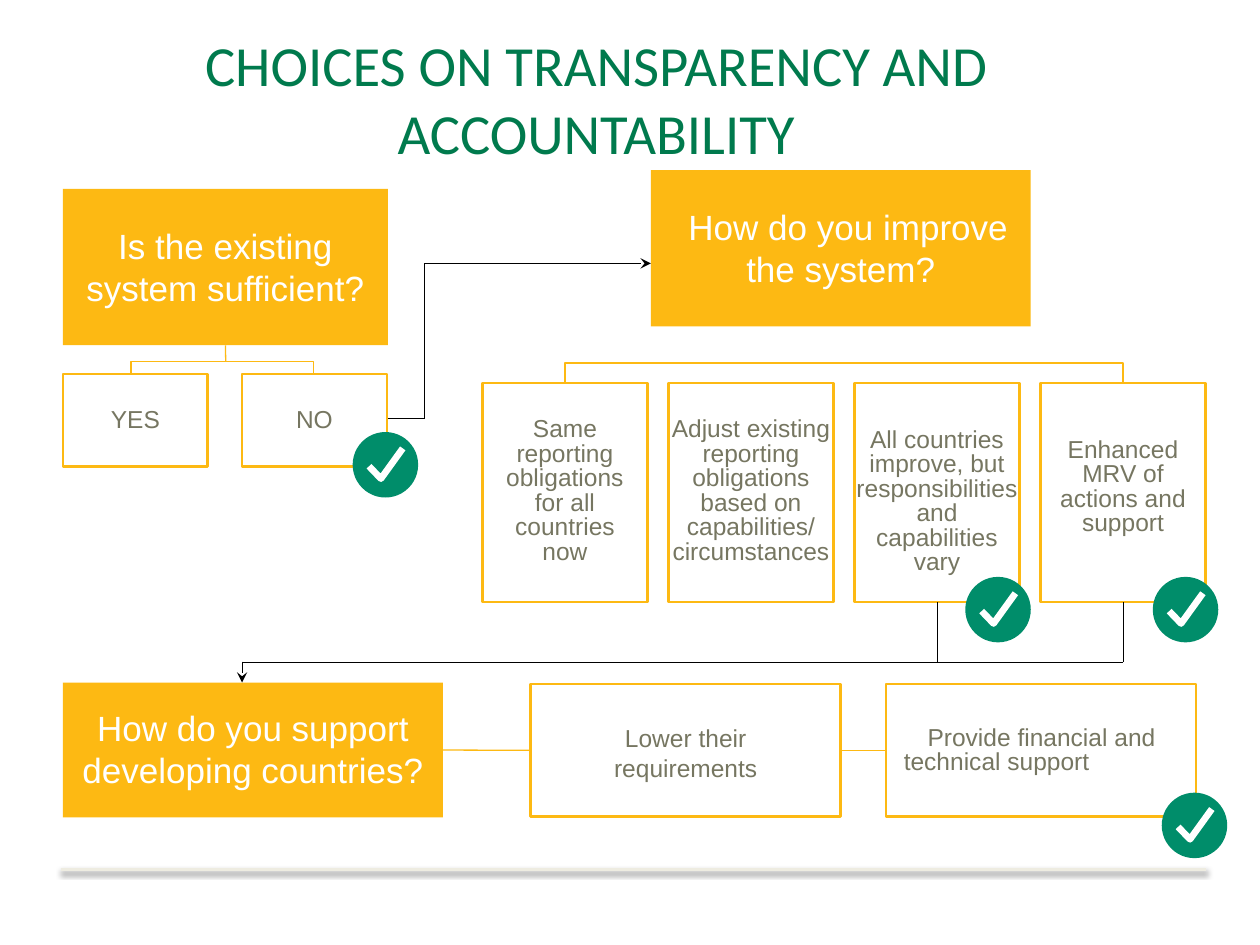
from lxml import etree
from pptx import Presentation, util as u
from pptx.dml.color import RGBColor
from pptx.enum import shapes, text
from pptx.oxml import ns

COLORS = {
    "amber": "FDB913", "green": "007A4D", "badge": "008D6A", "olive": "767661",
    "rule": "EEECE1", "black": "000000", "white": "FFFFFF",
}


def rgb(name):
    return RGBColor.from_string(COLORS[name])


def write(shape, content, font, size, color, insets, spacing=None, indent=0,
          align=text.PP_ALIGN.CENTER):
    frame = shape.text_frame
    frame.word_wrap = True
    frame.vertical_anchor = text.MSO_ANCHOR.TOP
    side, top = insets
    frame.margin_left = frame.margin_right = u.Cm(side)
    frame.margin_top, frame.margin_bottom = u.Cm(top), 0
    frame.text = content
    paragraph = frame.paragraphs[0]
    paragraph.alignment = align
    if spacing:
        paragraph.line_spacing = u.Pt(spacing)
    if indent:
        paragraph._p.get_or_add_pPr().set("indent", str(u.Cm(indent)))
    for run in paragraph.runs:
        run.font.name = font
        run.font.size = u.Pt(size)
        run.font.color.rgb = rgb(color)


def add_title(slide, content):
    shape = slide.shapes.add_textbox(u.Cm(1.22), u.Cm(0.38), u.Cm(21.6), u.Cm(2.8))
    write(shape, content, "Calibri", 32.4, "green", (0.25, 0.23))


def add_box(slide, left, top, width, height):
    shape = slide.shapes.add_shape(
        shapes.MSO_SHAPE.RECTANGLE, u.Cm(left), u.Cm(top), u.Cm(width), u.Cm(height))
    shape.shadow.inherit = False
    return shape


def add_question(slide, frame, content, inset_top, indent=0):
    shape = add_box(slide, *frame)
    shape.fill.solid()
    shape.fill.fore_color.rgb = rgb("amber")
    shape.line.fill.background()
    write(shape, content, "Arial", 20, "white", (0.3, inset_top), indent=indent)
    return shape


def add_answer(slide, frame, content, insets, **layout):
    shape = add_box(slide, *frame)
    shape.fill.background()
    shape.line.color.rgb = rgb("amber")
    shape.line.width = u.Pt(1.5)
    write(shape, content, "Arial", 14, "olive", insets, **layout)
    return shape


def add_line(slide, start, end, color="black", width=0.25, arrow=False):
    line = slide.shapes.add_connector(
        shapes.MSO_CONNECTOR.STRAIGHT, *(u.Cm(value) for value in (*start, *end)))
    line.line.color.rgb = rgb(color)
    line.line.width = u.Pt(width)
    if arrow:
        etree.SubElement(line.line._get_or_add_ln(), ns.qn("a:tailEnd"), type="stealth")
    etree.SubElement(line._element.spPr, ns.qn("a:effectLst"))
    return line


def add_polyline(parent, points, color, width):
    (first_x, first_y), *others = [(u.Cm(x), u.Cm(y)) for x, y in points]
    builder = parent.shapes.build_freeform(first_x, first_y)
    builder.add_line_segments(others, close=False)
    shape = builder.convert_to_shape()
    shape.shadow.inherit = False
    shape.fill.background()
    shape.line.color.rgb = rgb(color)
    shape.line.width = u.Pt(width)


def add_bracket(slide, left, right, top, bottom):
    points = [(left, bottom), (left, top), (right, top), (right, bottom)]
    add_polyline(slide, points, "amber", 0.75)


def add_check(slide, left, top):
    group = slide.shapes.add_group_shape()
    circle = add_box(group, left, top, 1.32, 1.32)
    circle.auto_shape_type
    circle._element.spPr.prstGeom.set("prst", "ellipse")
    circle.fill.solid()
    circle.fill.fore_color.rgb = rgb("badge")
    circle.line.fill.background()
    tick = [(0.33, 0.69), (0.57, 0.94), (1.01, 0.33)]
    add_polyline(group, [(left + x, top + y) for x, y in tick], "white", 3.8)


def add_footer_rule(slide):
    line = add_line(slide, (1.22, 17.53), (24.31, 17.53), "rule", 2)
    effects = line._element.spPr.find(ns.qn("a:effectLst"))
    shadow = etree.SubElement(
        effects, ns.qn("a:outerShdw"), blurRad=str(u.Pt(3.1)), dist=str(u.Pt(1.6)),
        dir="5400000", rotWithShape="0")
    color = etree.SubElement(shadow, ns.qn("a:srgbClr"), val=COLORS["black"])
    etree.SubElement(color, ns.qn("a:alpha"), val="38000")


def add_sufficiency(slide):
    question = add_question(
        slide, (1.27, 3.81, 6.55, 3.15), "Is the existing system sufficient?", 0.71)
    for left, answer in ((1.27, "YES"), (4.88, "NO")):
        add_answer(slide, (left, 7.54, 2.92, 1.87), answer, (0.3, 0.61))
    add_bracket(slide, 2.64, 6.32, 7.29, 7.54)
    stem = add_line(slide, (4.55, 6.96), (4.55, 7.29), "amber", 0.75)
    stem.begin_connect(question, 2)


def add_improvement(slide):
    add_question(
        slide, (13.12, 3.43, 7.66, 3.15), "How do you improve the system?", 0.71, 0.3)
    options = [
        ("Same reporting obligations for all countries now", (0.3, 0.71)),
        ("Adjust existing reporting obligations based on capabilities/ circumstances",
         (0, 0.71)),
        ("All countries improve, but responsibilities and capabilities vary",
         (0.03, 0.92)),
        ("Enhanced MRV of actions and support", (0.3, 1.12)),
    ]
    boxes = [
        add_answer(slide, (9.73 + 3.75 * index, 7.72, 3.32, 4.42), content, insets,
                   spacing=14)
        for index, (content, insets) in enumerate(options)
    ]
    add_bracket(slide, 11.39, 22.64, 7.32, 7.72)
    return boxes


def add_support(slide):
    question = add_question(
        slide, (1.27, 13.76, 7.66, 2.72), "How do you support developing countries?", 0.48)
    lower = add_answer(
        slide, (10.7, 13.79, 6.25, 2.67), "Lower their requirements", (1, 0.79))
    provide = add_answer(
        slide, (17.86, 13.79, 6.25, 2.67), "Provide financial and technical support",
        (0.36, 0.86), spacing=14, indent=0.48, align=text.PP_ALIGN.LEFT)
    for before, after in ((question, lower), (lower, provide)):
        line = add_line(slide, (0, 0), (1, 1), "amber", 0.75)
        line.begin_connect(before, 3)
        line.end_connect(after, 1)


def add_flow(slide, chosen):
    add_line(slide, (7.82, 8.43), (8.56, 8.43))
    add_line(slide, (8.56, 8.43), (8.56, 5.31))
    add_line(slide, (8.56, 5.31), (13.12, 5.31), arrow=True)
    for box, x in zip(chosen, (18.89, 22.64)):
        add_line(slide, (x, 12.14), (x, 13.34)).begin_connect(box, 2)
    add_line(slide, (22.64, 13.34), (4.88, 13.34))
    add_line(slide, (4.88, 13.34), (4.88, 13.76), arrow=True)


def main():
    presentation = Presentation()
    presentation.slide_width, presentation.slide_height = u.Cm(25.4), u.Cm(19.05)
    slide = presentation.slides.add_slide(presentation.slide_layouts[6])
    add_footer_rule(slide)
    add_title(slide, "CHOICES ON TRANSPARENCY AND ACCOUNTABILITY")
    add_sufficiency(slide)
    options = add_improvement(slide)
    add_support(slide)
    add_flow(slide, options[2:])
    for left, top in ((7.11, 8.71), (19.46, 11.63), (23.24, 11.63), (23.42, 15.98)):
        add_check(slide, left, top)
    presentation.save("out.pptx")


if __name__ == "__main__":
    main()
